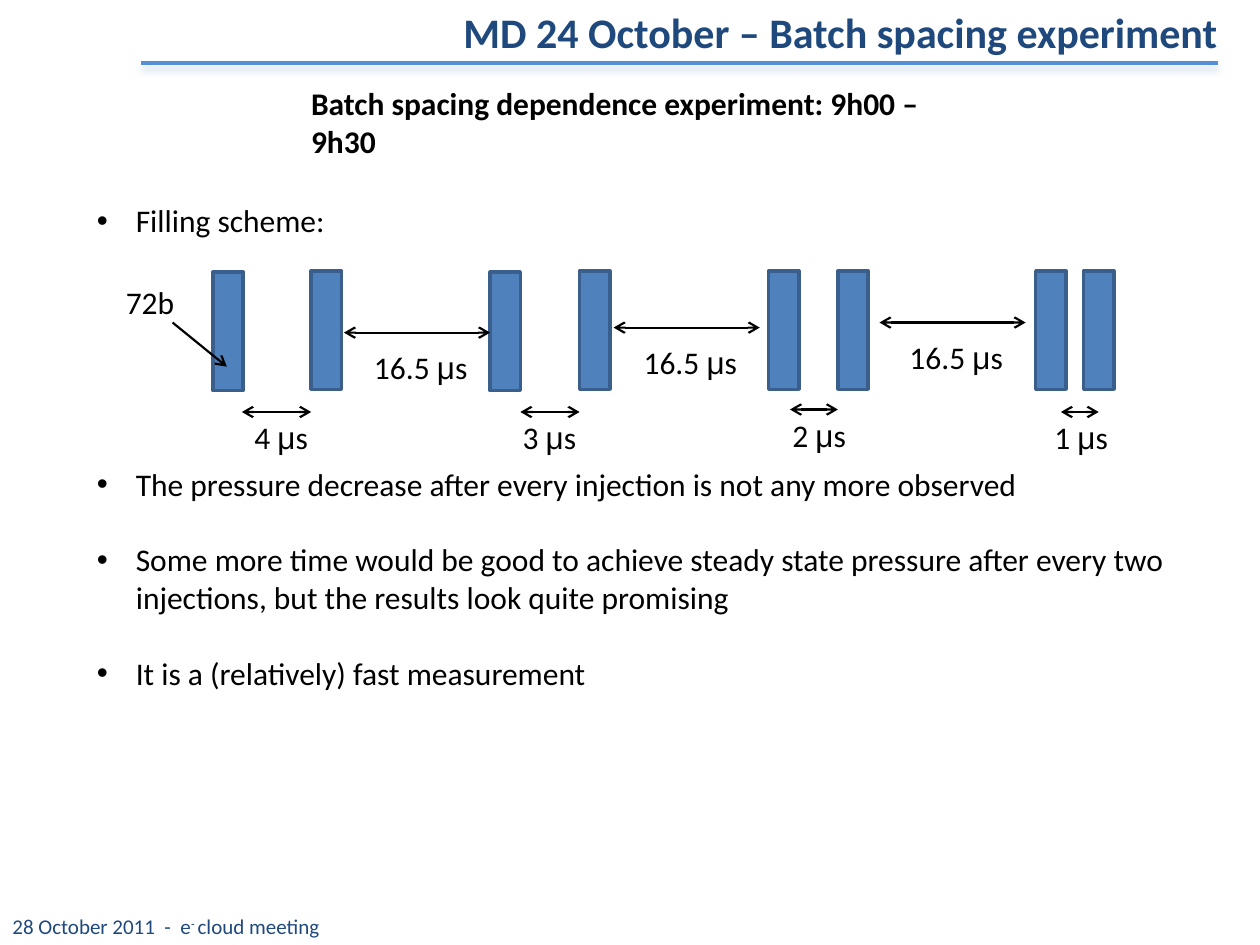
from dataclasses import dataclass

from lxml.etree import SubElement as Sub
from pptx import Presentation
from pptx.dml.color import RGBColor as RGB
from pptx.enum.shapes import MSO_CONNECTOR as Conn, MSO_SHAPE as Shape
from pptx.oxml.ns import qn
from pptx.util import Pt

PX = 9144


@dataclass(frozen=True)
class Theme:
    """Colours, fonts and type sizes of the slide."""
    ink: str = "000000"
    navy: str = "1F497D"
    rule: str = "558ED5"
    glow: str = "95B3D7"
    bar: str = "4F81BD"
    edge: str = "3A5F8C"
    font: str = "Calibri"
    greek: str = "Arial"
    head: int = 24
    body: int = 18
    foot: int = 12


T = Theme()


def px(*vals):
    """Turn px lengths into EMU."""
    return [v * PX for v in vals]


def style(para, size, color, bold=False):
    """Set the font of a whole paragraph."""
    font = para.font
    font.name, font.size, font.bold = T.font, Pt(size), bold
    font.color.rgb = RGB.from_string(color)


def text(shapes, box, parts, size=T.body, color=T.ink, bold=False, wrap=False):
    """Add a one-paragraph text box and return its runs."""
    frame = shapes.add_textbox(*px(*box)).text_frame
    frame.word_wrap = wrap
    para = frame.paragraphs[0]
    style(para, size, color, bold)
    for part in parts:
        para.add_run().text = part
    return para.runs


def line(shapes, start, end, color=T.ink, width=1.25, heads=()):
    """Add a straight line with open arrowheads and return its effect list."""
    conn = shapes.add_connector(Conn.STRAIGHT, *px(*start, *end))
    conn.line.color.rgb = RGB.from_string(color)
    conn.line.width = Pt(width)
    stroke = conn.line._get_or_add_ln()
    for head in heads:
        Sub(stroke, qn(f"a:{head}"), type="arrow")
    return Sub(conn._element.spPr, qn("a:effectLst"))


def header(shapes, x, y):
    """Draw the title, its shadowed rule and the subtitle."""
    glow = line(shapes, (x, y + 50), (x + 855, y + 50), T.rule, 2.75)
    shade = Sub(glow, qn("a:outerShdw"), blurRad=str(Pt(4)), dist=str(Pt(3)),
                dir="5400000", rotWithShape="0")
    tint = Sub(shade, qn("a:srgbClr"), val=T.glow)
    Sub(tint, qn("a:alpha"), val="40000")
    text(shapes, (x + 246, y, 630, 50),
         ["MD 24 October – Batch spacing experiment"], T.head, T.navy, True)
    text(shapes, (x + 125, y + 62, 559, 40),
         ["Batch spacing dependence experiment: 9h00 – 9h30"], bold=True)


def points(shapes, box, items):
    """List bulleted points, each with its space before."""
    frame = shapes.add_textbox(*px(*box)).text_frame
    frame.word_wrap = True
    for i, (words, gap) in enumerate(items):
        para = frame.paragraphs[0] if i == 0 else frame.add_paragraph()
        para.add_run().text = words
        prop = para._p.get_or_add_pPr()
        prop.set("marL", str(31 * PX))
        prop.set("indent", str(-31 * PX))
        Sub(prop, qn("a:buFont"), typeface="Arial")
        Sub(prop, qn("a:buChar"), char="•")
        para.space_before = Pt(gap)
        style(para, T.body, T.ink)


def span(shapes, x, y, width, num, label):
    """Draw a two-headed time span with its label box."""
    line(shapes, (x, y), (x + width, y), heads=("headEnd", "tailEnd"))
    runs = text(shapes, label, [f"{num} ", "μ", "s"])
    runs[1].font.name = T.greek


def scheme(shapes, x, y):
    """Draw the filling scheme as batch pairs with their spacings."""
    shapes = shapes.add_group_shape().shapes
    bars = ((79, 1), (157, 0), (299, 1), (370, 0),
            (520, 0), (575, 0), (732, 0), (770, 0))
    for left, top in bars:
        bar = shapes.add_shape(Shape.RECTANGLE, *px(x + left, y + top, 24, 94))
        bar.shadow.inherit = False
        bar.fill.solid()
        bar.fill.fore_color.rgb = RGB.from_string(T.bar)
        bar.line.color.rgb = RGB.from_string(T.edge)
        bar.line.width = Pt(2)
    near = ((4, 102, 112, 55, 102), (3, 323, 112, 47, 315),
            (2, 537, 110, 38, 529), (1, 752, 112, 30, 737))
    for num, left, top, width, tag in near:
        span(shapes, x + left, y + top, width, num, (x + tag, y + top, 67, 40))
    for left, top in ((183, 49), (397, 45), (608, 41)):
        span(shapes, x + left, y + top, 116, 16.5,
             (x + left + 14, y + top + 7, 94, 40))
    text(shapes, (x, y + 5, 63, 40), ["72b"])
    line(shapes, (x + 47, y + 41), (x + 90, y + 76), heads=("tailEnd",))


def footer(shapes, box):
    """Write the date and meeting line."""
    runs = text(shapes, box, ["28 October 2011  -  e", "- ", "cloud meeting"],
                T.foot, T.navy, wrap=True)
    runs[1]._r.get_or_add_rPr().set("baseline", "30000")


def main():
    """Build and save the slide."""
    deck = Presentation()
    deck.slide_width, deck.slide_height = px(1000, 750)
    shapes = deck.slides.add_slide(deck.slide_layouts[6]).shapes
    header(shapes, 112, 0)
    points(shapes, (67, 155, 874, 434), (
        ("Filling scheme:", 0),
        ("The pressure decrease after every injection is not any more observed", 129),
        ("Some more time would be good to achieve steady state pressure after "
         "every two injections, but the results look quite promising", 21.5),
        ("It is a (relatively) fast measurement", 21.5)))
    scheme(shapes, 90, 215)
    footer(shapes, (0, 720, 942, 30))
    deck.save("out.pptx")


if __name__ == "__main__":
    main()
